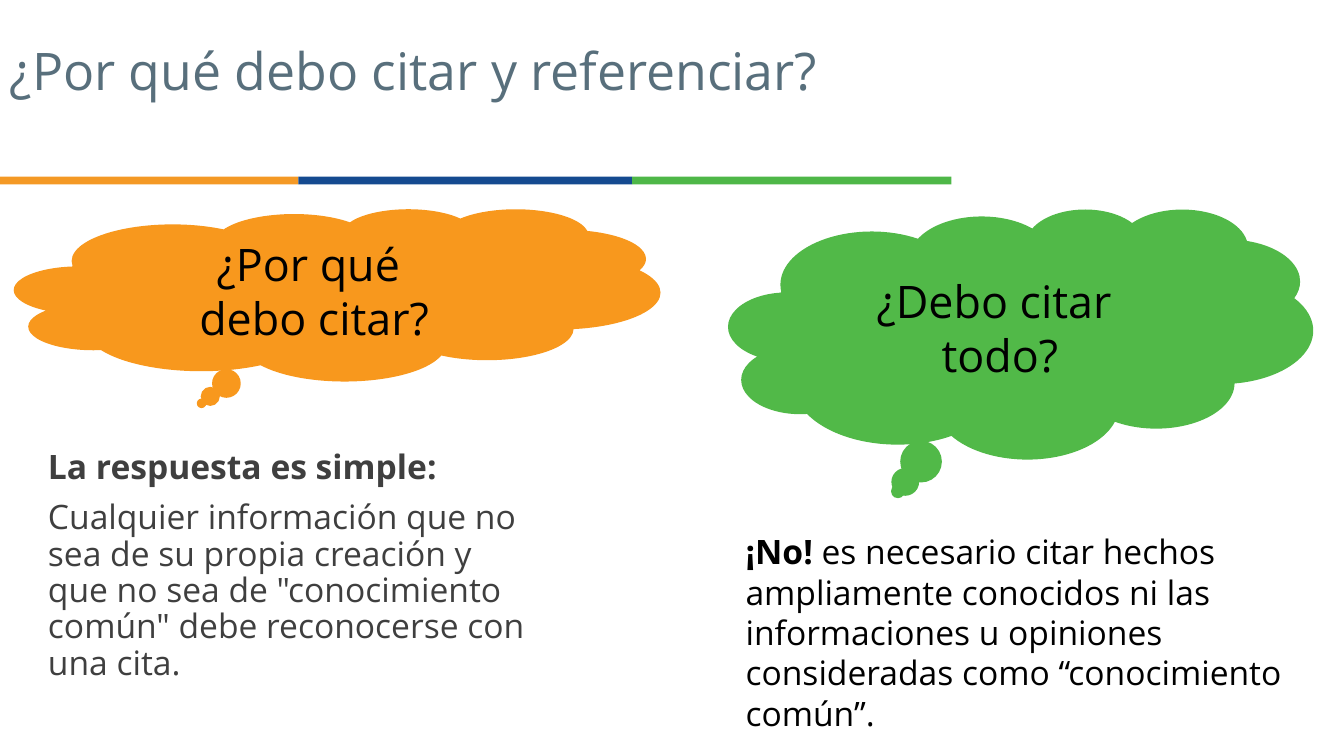
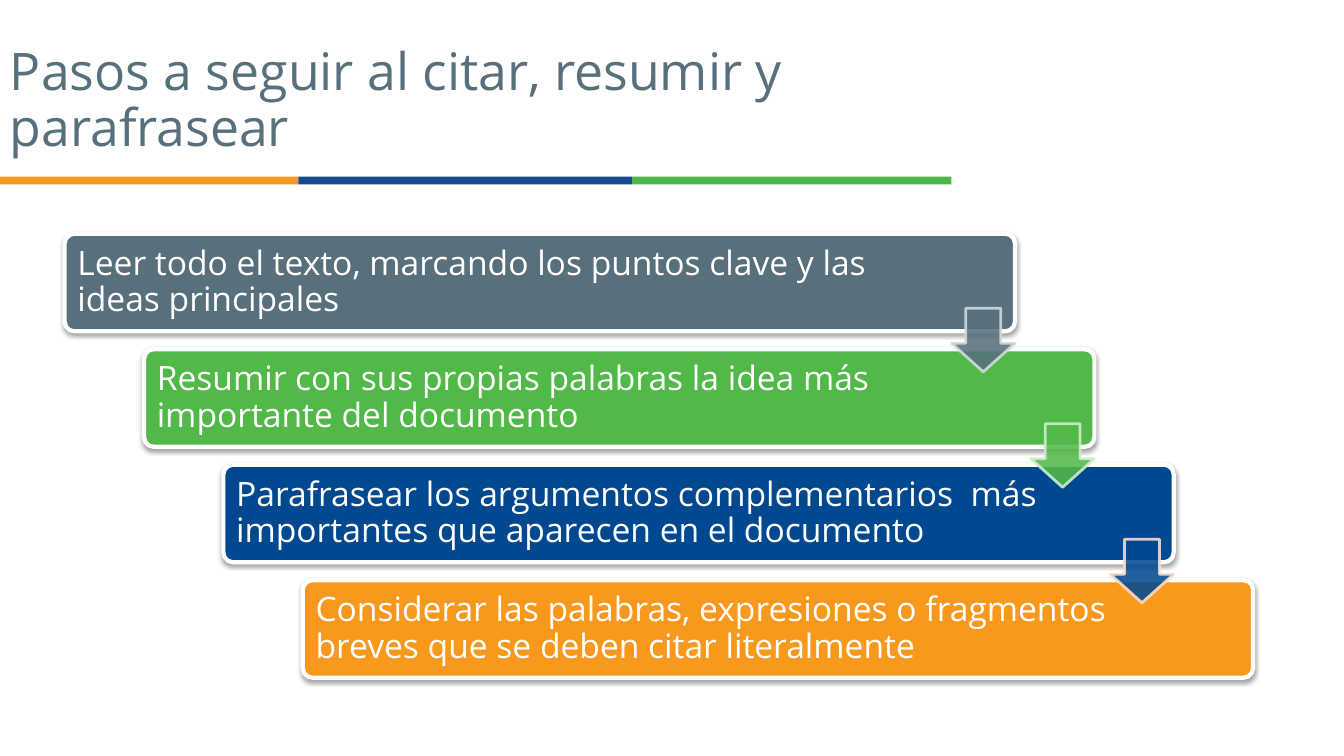
from lxml.etree import SubElement
from pptx import Presentation
from pptx.dml.color import RGBColor
from pptx.enum.shapes import MSO_SHAPE
from pptx.enum.text import MSO_ANCHOR, PP_ALIGN
from pptx.oxml.ns import qn
from pptx.util import Cm, Pt

FONT = "Open Sans"
COLORS = {
    "slate": "586F7C", "green": "51B948", "blue": "004890", "orange": "F8981D",
    "band_orange": "F49925", "band_blue": "154A90", "band_green": "4EB748",
    "slate_edge": "D5DBDD", "green_edge": "D1EFCD", "blue_edge": "FEDECB",
    "body": "3F3F3F", "black": "000000", "white": "FFFFFF",
}
BANDS = [("band_orange", 7.52), ("band_blue", 8.41), ("band_green", 8.05)]
STEPS = [
    ("Leer todo el texto, marcando los puntos clave y las ideas principales", "slate"),
    ("Resumir con sus propias palabras la idea más importante del documento", "green"),
    ("Parafrasear los argumentos complementarios  más importantes que aparecen en el documento", "blue"),
    ("Considerar las palabras, expresiones o fragmentos breves que se deben citar literalmente", "orange"),
]
STEP_X, STEP_Y, STEP_W, STEP_H = 1.63, 5.89, 23.95, 2.46
STEP_DX, STEP_DY = 2, 2.91
ARROW_SIZE, ARROW_DROP = 1.6, 1.88


def color(name):
    return RGBColor.from_string(COLORS[name])


def write_paragraph(p, parts, size, ink, spacing=None):
    """Fill a paragraph with (text, bold) parts."""
    p.line_spacing = spacing
    for text, bold in parts:
        r = p.add_run()
        r.text = text
        r.font.name, r.font.size, r.font.bold = FONT, Pt(size), bold
        r.font.color.rgb = color(ink)


def add_text(s, x, y, w, h, paragraphs, size, ink, spacing=None):
    tf = s.shapes.add_textbox(Cm(x), Cm(y), Cm(w), Cm(h)).text_frame
    tf.word_wrap = True
    for i, parts in enumerate(paragraphs):
        p = tf.add_paragraph() if i else tf.paragraphs[0]
        write_paragraph(p, parts, size, ink, spacing)
        if i:
            p.space_before = Pt(10)


def add_preset(s, kind, x, y, w, h, fill, adjustments=(), edge=None, edge_width=0):
    sp = s.shapes.add_shape(kind, Cm(x), Cm(y), Cm(w), Cm(h))
    sp.shadow.inherit = False
    for i, value in enumerate(adjustments):
        sp.adjustments[i] = value
    sp.fill.solid()
    sp.fill.fore_color.rgb = color(fill)
    if edge:
        sp.line.color.rgb = color(edge)
        sp.line.width = Pt(edge_width)
    else:
        sp.line.fill.background()
    return sp


def add_cloud(s, x, y, w, h, fill, text):
    sp = add_preset(s, MSO_SHAPE.CLOUD_CALLOUT, x, y, w, h, fill, (-0.21, 0.63))
    tf = sp.text_frame
    tf.word_wrap = True
    tf.vertical_anchor = MSO_ANCHOR.MIDDLE
    p = tf.paragraphs[0]
    p.text = text
    p.alignment = PP_ALIGN.CENTER
    for r in p.runs:
        r.font.name, r.font.size = FONT, Pt(32)
        r.font.color.rgb = color("black")


def add_drop_shadow(sp):
    effects = sp._element.spPr.find(qn("a:effectLst"))
    shadow = SubElement(effects, qn("a:outerShdw"), blurRad=str(Pt(3.1)),
                        dist=str(Pt(1.6)), dir="5400000", rotWithShape="0")
    ink = SubElement(shadow, qn("a:srgbClr"), val=COLORS["black"])
    SubElement(ink, qn("a:alpha"), val="35000")


def add_step(s, x, y, text, fill):
    sp = add_preset(s, MSO_SHAPE.ROUNDED_RECTANGLE, x, y, STEP_W, STEP_H, fill,
                    (0.1,), "white", 3)
    add_drop_shadow(sp)
    tf = sp.text_frame
    tf.word_wrap = True
    tf.vertical_anchor = MSO_ANCHOR.MIDDLE
    tf.margin_left, tf.margin_right = Cm(0.25), Cm(3.2)
    p = tf.paragraphs[0]
    p.alignment = PP_ALIGN.LEFT
    write_paragraph(p, [(text, False)], 24, "white", 0.9)


def add_step_arrow(s, x, y, fill):
    sp = add_preset(s, MSO_SHAPE.DOWN_ARROW, x, y, ARROW_SIZE, ARROW_SIZE, fill,
                    (0.45, 0.55), fill + "_edge", 2)
    # Adjustments: head length, then shaft width
    sp.adjustments[0], sp.adjustments[1] = 0.55, 0.45
    for ink in sp._element.spPr.iter(qn("a:srgbClr")):
        SubElement(ink, qn("a:alpha"), val="87000")


def new_slide(prs, title, title_width):
    """Blank slide with the shared colour bands and title."""
    s = prs.slides.add_slide(prs.slide_layouts[6])
    x = 0
    for fill, w in BANDS:
        add_preset(s, MSO_SHAPE.RECTANGLE, x, 4.45, w, 0.2, fill)
        x += w
    add_text(s, 0, 1.04, title_width, 3, [[(title, False)]], 37, "slate", 0.9)
    return s


def build_reasons(prs):
    s = new_slide(prs, "¿Por qué debo citar y referenciar?", 26.7)
    # Answers
    add_text(s, 0.96, 11.23, 12.8, 6.2, [
        [("La respuesta es simple:", True)],
        [('Cualquier información que no sea de su propia creación y que no sea de '
          '"conocimiento común" debe reconocerse con una cita.', False)],
    ], 24, "body", 0.9)
    add_text(s, 18.54, 13.26, 14.96, 5.38, [
        [("¡No! ", True),
         ("es necesario citar hechos ampliamente conocidos ni las informaciones u "
          "opiniones consideradas como “conocimiento común”.", False)],
    ], 24, "black")
    # Questions
    add_cloud(s, 0.36, 5.26, 16.28, 4.34, "orange", "¿Por qué \vdebo citar?")
    add_cloud(s, 18.36, 5.26, 14.73, 6.3, "green", "¿Debo citar \vtodo?")


def build_steps(prs):
    s = new_slide(prs, "Pasos a seguir al citar, resumir y parafrasear", 22.63)
    corners = [(STEP_X + i * STEP_DX, STEP_Y + i * STEP_DY) for i in range(len(STEPS))]
    for (x, y), (text, fill) in zip(corners, STEPS):
        add_step(s, x, y, text, fill)
    # Arrows lie over the cards, one between each pair
    for (x, y), (_, fill) in zip(corners[:-1], STEPS):
        add_step_arrow(s, x + STEP_W - ARROW_SIZE, y + ARROW_DROP, fill)


def main():
    prs = Presentation()
    prs.slide_width, prs.slide_height = Cm(33.87), Cm(19.05)
    build_reasons(prs)
    build_steps(prs)
    prs.save("out.pptx")


if __name__ == "__main__":
    main()
